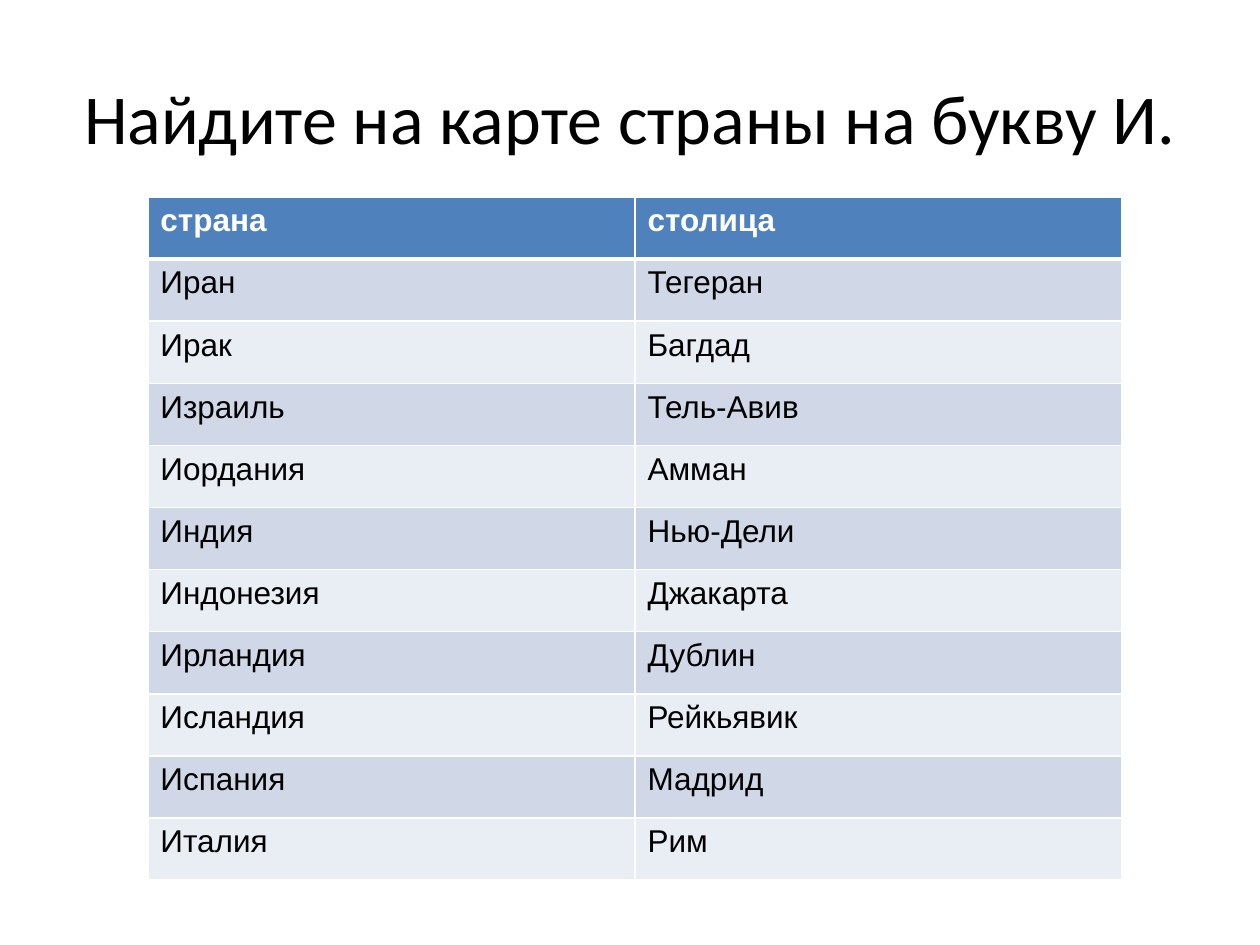
"""Build a slide with a table of countries and their capitals."""
from lxml.etree import SubElement as Sub
from pptx import Presentation
from pptx.dml.color import RGBColor
from pptx.enum.text import MSO_ANCHOR as Anchor, PP_ALIGN as Align
from pptx.oxml.ns import qn
from pptx.util import Cm, Pt


def paint(fmt, tint):
    fmt.solid()
    fmt.fore_color.rgb = RGBColor.from_string(tint)


def edge(cell, side, width):
    line = Sub(cell._tc.get_or_add_tcPr(), qn(f"a:ln{side}"), w=str(Pt(width)))
    Sub(Sub(line, qn("a:solidFill")), qn("a:srgbClr"), val="FFFFFF")


pairs = [
    ("страна", "столица"),
    ("Иран", "Тегеран"),
    ("Ирак", "Багдад"),
    ("Израиль", "Тель-Авив"),
    ("Иордания", "Амман"),
    ("Индия", "Нью-Дели"),
    ("Индонезия", "Джакарта"),
    ("Ирландия", "Дублин"),
    ("Исландия", "Рейкьявик"),
    ("Испания", "Мадрид"),
    ("Италия", "Рим"),
]

deck = Presentation()
deck.slide_width, deck.slide_height = Cm(25.4), Cm(19.05)
slide = deck.slides.add_slide(deck.slide_layouts[6])

title = slide.shapes.add_textbox(Cm(1.27), Cm(0.76), Cm(22.86), Cm(3.18))
frame = title.text_frame
frame.word_wrap = True
frame.vertical_anchor = Anchor.MIDDLE
head = frame.paragraphs[0]
head.text = "Найдите на карте страны на букву И."
head.alignment = Align.CENTER
head.font.name, head.font.size = "Calibri", Pt(40)
paint(head.font.fill, "000000")

grid = slide.shapes.add_table(
    len(pairs), 2, Cm(2.98), Cm(3.97), Cm(19.64), Cm(13.78)
).table
for row, pair in enumerate(pairs):
    top = row == 0
    for col, word in enumerate(pair):
        cell = grid.cell(row, col)
        for side in "LRTB":
            thick = (row, side) in [(0, "B"), (1, "T")]
            edge(cell, side, 3 if thick else 1)
        paint(cell.fill, "4F81BD" if top else ("E9EDF4", "D0D8E8")[row % 2])
        cell.text = word
        font = cell.text_frame.paragraphs[0].font
        font.name, font.size, font.bold = "Arial", Pt(18), top
        paint(font.fill, "FFFFFF" if top else "000000")

deck.save("out.pptx")
